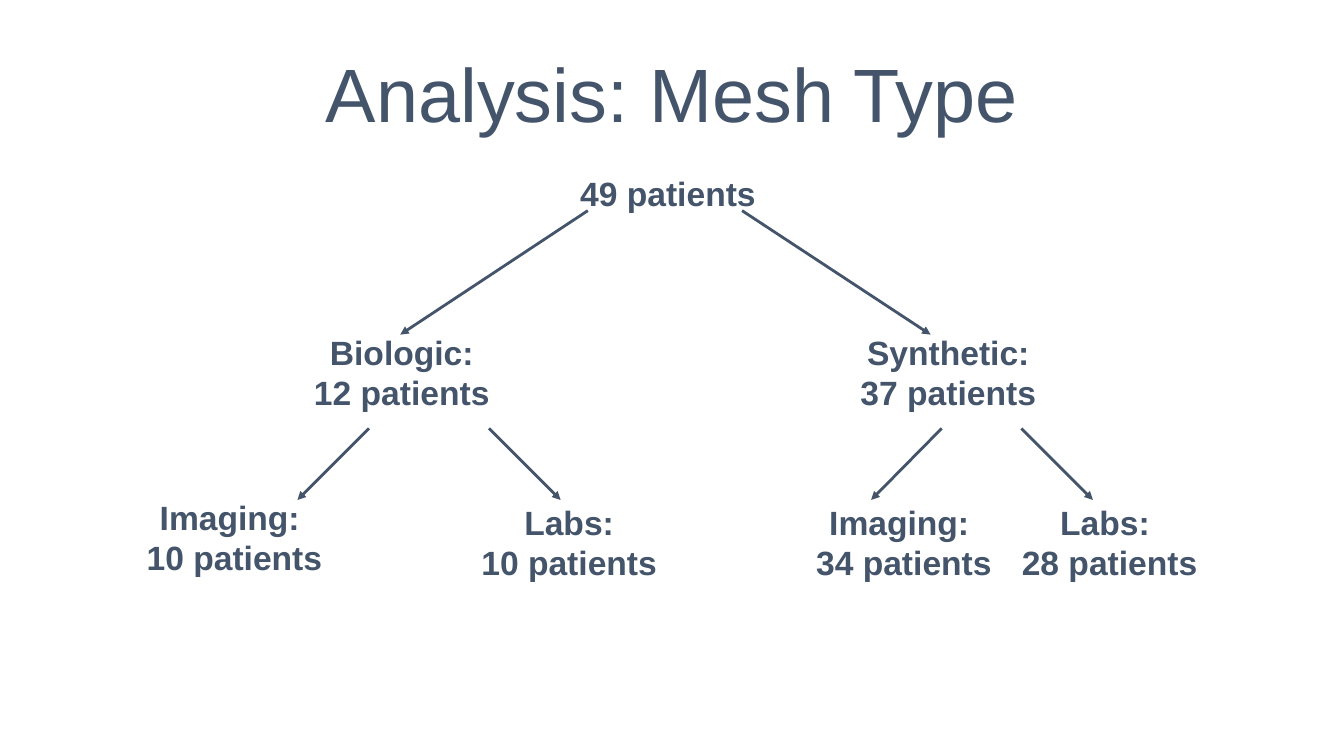
"""Build the mesh type analysis slide: a patient tree with arrows."""
from dataclasses import dataclass

from pptx import Presentation
from pptx import util as u
from pptx.dml.color import RGBColor
from pptx.enum import shapes, text
from pptx.oxml import parse_xml
from pptx.oxml.ns import nsdecls

COLORS = {"ink": "44546A", "background": "FFFFFF"}
FONT = "Arial"
NODE_WIDTH = 1.87
LINE_HEIGHT = 0.4
INSET = 0.06


@dataclass(frozen=True)
class Node:
    """A centred group label with its top left corner in inches."""
    left: float
    top: float
    lines: tuple[str, ...]


@dataclass(frozen=True)
class Arrow:
    """A branch from a parent to a child, in inches."""
    x1: float
    y1: float
    x2: float
    y2: float


NODES = (
    Node(5.69, 1.66, ("49 patients",)),
    Node(3.05, 3.23, ("Biologic:", "12 patients")),
    Node(8.47, 3.23, ("Synthetic:", "37 patients")),
    Node(1.39, 4.87, ("Imaging: ", "10 patients")),
    Node(4.71, 4.92, ("Labs:", "10 patients")),
    Node(8.03, 4.92, ("Imaging: ", "34 patients")),
    Node(10.07, 4.92, ("Labs: ", "28 patients")),
)
ARROWS = (
    Arrow(5.83, 2.09, 3.97, 3.32),
    Arrow(7.36, 2.09, 9.23, 3.32),
    Arrow(3.66, 4.25, 2.95, 4.96),
    Arrow(4.85, 4.25, 5.56, 4.96),
    Arrow(9.34, 4.25, 8.64, 4.96),
    Arrow(10.13, 4.25, 10.84, 4.96),
)


def rgb(name: str) -> RGBColor:
    """Look up a named colour."""
    return RGBColor.from_string(COLORS[name])


def add_run(p, words: str, size: float, bold: bool = False) -> None:
    """Add one formatted run to a centred paragraph."""
    p.alignment = text.PP_ALIGN.CENTER
    r = p.add_run()
    r.text = words
    r.font.name = FONT
    r.font.size = u.Pt(size)
    r.font.bold = bold
    r.font.color.rgb = rgb("ink")


def set_title(s, words: str) -> None:
    """Place and format the title placeholder."""
    sp = s.shapes.title
    sp.left, sp.top = u.Inches(0), u.Inches(0.25)
    sp.width, sp.height = u.Inches(13.33), u.Inches(1.45)
    tf = sp.text_frame
    tf.vertical_anchor = text.MSO_ANCHOR.MIDDLE
    p = tf.paragraphs[0]
    p.line_spacing = 0.9
    add_run(p, words, 54)


def add_node(s, node: Node) -> None:
    """Draw one group label."""
    height = LINE_HEIGHT * len(node.lines) + 2 * INSET
    sp = s.shapes.add_textbox(u.Inches(node.left), u.Inches(node.top),
                              u.Inches(NODE_WIDTH), u.Inches(height))
    tf = sp.text_frame
    tf.word_wrap = False
    tf.auto_size = text.MSO_AUTO_SIZE.SHAPE_TO_FIT_TEXT
    tf.vertical_anchor = text.MSO_ANCHOR.MIDDLE
    tf.margin_left = tf.margin_right = u.Inches(INSET)
    tf.margin_top = tf.margin_bottom = u.Inches(INSET)
    for i, line in enumerate(node.lines):
        p = tf.add_paragraph() if i else tf.paragraphs[0]
        add_run(p, line, 24, bold=True)


def add_arrow(s, arrow: Arrow) -> None:
    """Draw one branch with a triangular head."""
    sp = s.shapes.add_connector(
        shapes.MSO_CONNECTOR.STRAIGHT, u.Inches(arrow.x1), u.Inches(arrow.y1),
        u.Inches(arrow.x2), u.Inches(arrow.y2))
    sp.line.color.rgb = rgb("ink")
    sp.line.width = u.Pt(2)
    sp.line._get_or_add_ln().append(
        parse_xml(f'<a:tailEnd {nsdecls("a")} type="triangle"/>'))
    sp._element.spPr.append(parse_xml(f'<a:effectLst {nsdecls("a")}/>'))


def main() -> None:
    """Build and save the slide."""
    prs = Presentation()
    prs.slide_width, prs.slide_height = u.Inches(13.33), u.Inches(7.5)
    s = prs.slides.add_slide(prs.slide_layouts.get_by_name("Title Only"))
    s.background.fill.solid()
    s.background.fill.fore_color.rgb = rgb("background")
    set_title(s, "Analysis: Mesh Type")
    for node in NODES:
        add_node(s, node)
    for arrow in ARROWS:
        add_arrow(s, arrow)
    prs.save("out.pptx")


if __name__ == "__main__":
    main()
